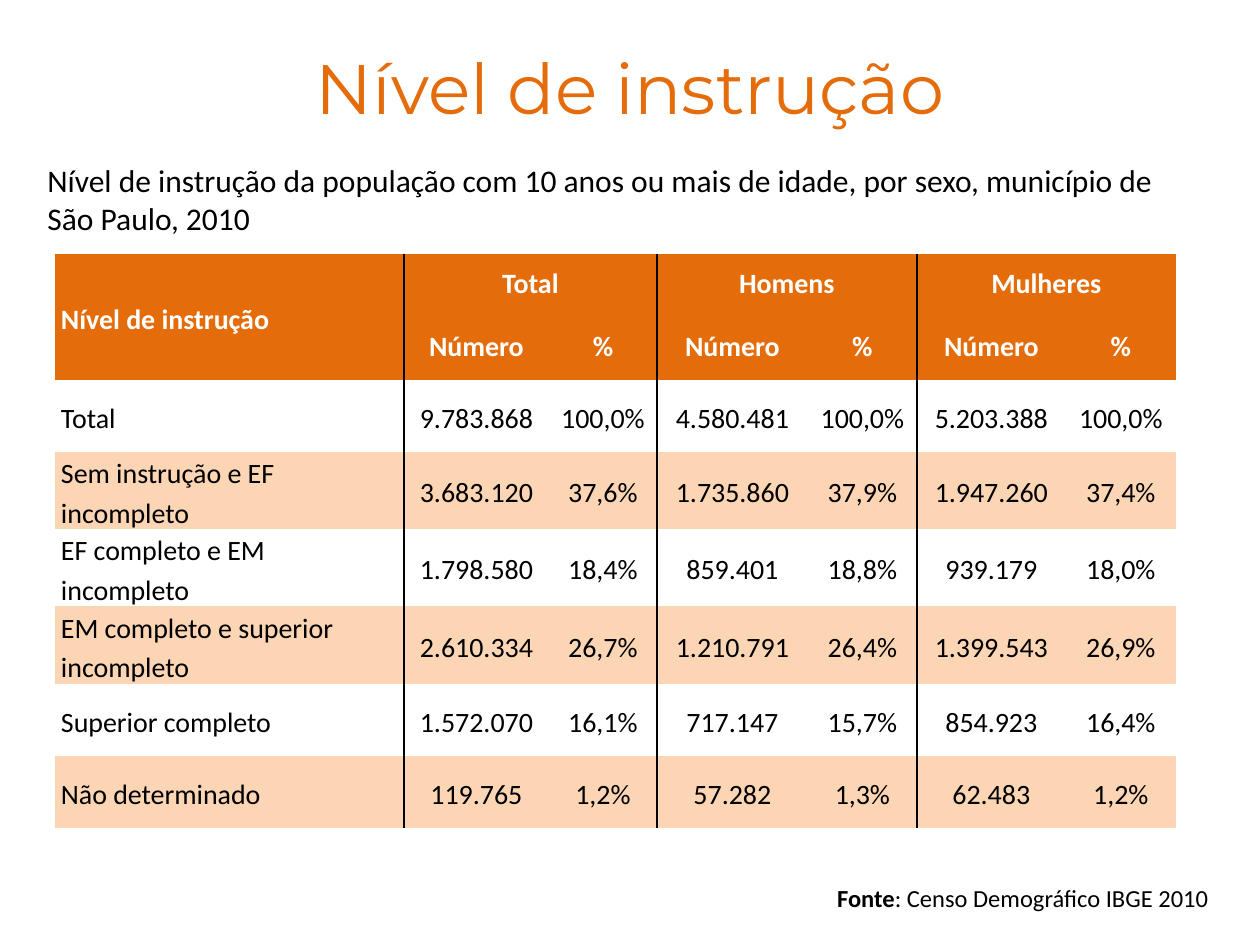
from lxml.etree import SubElement
from pptx import Presentation
from pptx.dml.color import RGBColor
from pptx.enum.text import MSO_ANCHOR, PP_ALIGN
from pptx.oxml.ns import qn
from pptx.util import Pt

PX = 7257  # EMU in one px, 126 px to the inch
ORANGE, PEACH, BLACK, WHITE = "E46C0A", "FCD5B5", "000000", "FFFFFF"

# Content
TITLE = "Nível de instrução"
LEAD = ("Nível de instrução da população com 10 anos ou mais de idade, "
        "por sexo, município de São Paulo, 2010")
SOURCE = [("Fonte", True), (": Censo Demográfico IBGE 2010", False)]
GROUPS = ["Total", "Homens", "Mulheres"]
PAIR = ["Número", "%"]
ROWS = [
    ["Total", "9.783.868", "100,0%", "4.580.481", "100,0%", "5.203.388", "100,0%"],
    ["Sem instrução e EF incompleto", "3.683.120", "37,6%", "1.735.860", "37,9%", "1.947.260", "37,4%"],
    ["EF completo e EM incompleto", "1.798.580", "18,4%", "859.401", "18,8%", "939.179", "18,0%"],
    ["EM completo e superior incompleto", "2.610.334", "26,7%", "1.210.791", "26,4%", "1.399.543", "26,9%"],
    ["Superior completo", "1.572.070", "16,1%", "717.147", "15,7%", "854.923", "16,4%"],
    ["Não determinado", "119.765", "1,2%", "57.282", "1,3%", "62.483", "1,2%"],
]
WIDTHS = [349, 145, 108, 151, 109, 149, 110]
HEIGHTS = [54, 72, 72, 72, 72, 78, 72, 72]


def px(*vals):
    return [v * PX for v in vals]


def color(code):
    return RGBColor.from_string(code)


def assign(obj, vals):
    for key, val in vals.items():
        setattr(obj, key, val)


def write(frame, runs, size, ink, align, face="Calibri", gap=None):
    para = frame.paragraphs[0]
    assign(para, {"alignment": align, "line_spacing": gap})
    for text, bold in runs:
        run = para.add_run()
        run.text = text
        assign(run.font, {"name": face, "size": Pt(size), "bold": bold})
        run.font.color.rgb = color(ink)


def label(slide, box, runs, *style, anchor=MSO_ANCHOR.TOP):
    frame = slide.shapes.add_textbox(*px(*box)).text_frame
    assign(frame, {"word_wrap": True, "vertical_anchor": anchor})
    write(frame, runs, *style)


def border(cell, sides):
    props = cell._tc.get_or_add_tcPr()
    for side in "LRTB":
        line = SubElement(props, qn("a:ln" + side), w=str(Pt(1)))
        if side in sides:
            fill = SubElement(line, qn("a:solidFill"))
            SubElement(fill, qn("a:srgbClr"), val=BLACK)
        else:
            SubElement(line, qn("a:noFill"))


def build_table(slide):
    top = [TITLE] + [text for name in GROUPS for text in (name, "")]
    grid = [top, [""] + PAIR * len(GROUPS)] + ROWS
    last = len(WIDTHS) - 1
    table = slide.shapes.add_table(
        len(grid), len(WIDTHS), *px(55, 254, sum(WIDTHS), sum(HEIGHTS))).table
    assign(table, {"first_row": False, "horz_banding": False})
    for col, wide in zip(table.columns, WIDTHS):
        col.width = wide * PX
    for row, high in zip(table.rows, HEIGHTS):
        row.height = high * PX

    # Joined header cells
    table.cell(0, 0).merge(table.cell(1, 0))
    for c in range(1, last, 2):
        table.cell(0, c).merge(table.cell(0, c + 1))

    for r, line in enumerate(grid):
        head = r < 2
        for c, text in enumerate(line):
            cell = table.cell(r, c)
            assign(cell, {"margin_left": 6 * PX, "margin_right": 6 * PX,
                          "margin_top": 0, "margin_bottom": 0,
                          "vertical_anchor": MSO_ANCHOR.MIDDLE})
            # Rules stand to the left of each pair of columns
            sides = "L" if c % 2 else "R" if c < last else ""
            if head and cell.is_merge_origin and 0 < c < last - 1:
                sides = "LR"
            border(cell, sides)
            if head or r % 2:
                cell.fill.solid()
                cell.fill.fore_color.rgb = color(ORANGE if head else PEACH)
            else:
                cell.fill.background()
            if text:
                write(cell.text_frame, [(text, head)], 16, WHITE if head else BLACK,
                      PP_ALIGN.CENTER if c else PP_ALIGN.LEFT, gap=1.15)


def main():
    deck = Presentation()
    deck.slide_width, deck.slide_height = px(1260, 945)
    slide = deck.slides.add_slide(deck.slide_layouts[6])

    # Source note, table, title and lead
    label(slide, (789, 876, 432, 43), SOURCE, 14, BLACK, PP_ALIGN.RIGHT,
          anchor=MSO_ANCHOR.MIDDLE)
    build_table(slide)
    label(slide, (63, 38, 1134, 158), [(TITLE, False)], 40, ORANGE,
          PP_ALIGN.CENTER, "Montserrat")
    label(slide, (35, 155, 1160, 127), [(LEAD, False)], 18, BLACK, PP_ALIGN.LEFT)
    deck.save("out.pptx")


if __name__ == "__main__":
    main()
